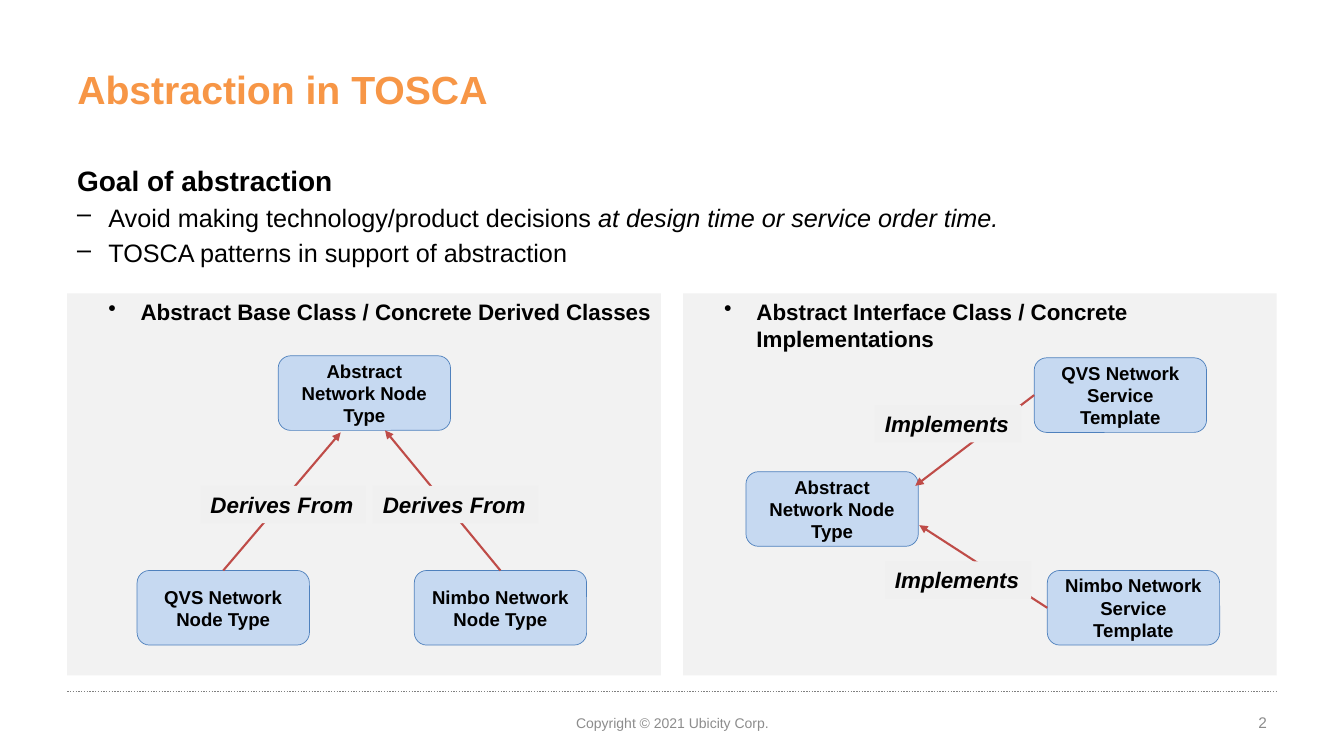
from dataclasses import dataclass

from lxml import etree
from pptx import Presentation
from pptx import util as u
from pptx.dml.color import RGBColor
from pptx.enum import dml, shapes, text
from pptx.oxml.ns import qn


@dataclass(frozen=True)
class Theme:
    font: str = "Arial"
    ink: str = "000000"
    accent: str = "F79646"
    muted: str = "8C8C8C"
    rule: str = "808080"
    panel: str = "F2F2F2"
    label: str = "F0F0F0"
    node: str = "C6D9F1"
    node_edge: str = "4F81BD"
    arrow: str = "BF4C48"
    title_size: float = 28
    heading_size: float = 20
    bullet_size: float = 18
    panel_size: float = 16
    node_size: float = 13.3
    number_size: float = 11
    footer_size: float = 10


class Sheet:
    """One slide laid out on a grid of 40 columns and 30 rows."""
    COLUMNS, ROWS = 40, 30
    NODE = (5.13, 2.96)

    def __init__(self, deck, theme):
        self.theme = theme
        self.column = deck.slide_width / self.COLUMNS
        self.row = deck.slide_height / self.ROWS
        self.page = deck.slides.add_slide(deck.slide_layouts[5])

    def place(self, *lengths):
        units = (self.column, self.row) * 2
        return [u.Emu(round(n * unit)) for n, unit in zip(lengths, units)]

    def style(self, para, size, color=None, bold=False, italic=False,
              align=text.PP_ALIGN.LEFT):
        para.alignment = align
        font = para.font
        font.name, font.size = self.theme.font, u.Pt(size)
        font.bold, font.italic = bold, italic
        font.color.rgb = RGBColor.from_string(color or self.theme.ink)

    def bullet(self, para, mark, margin, hang):
        props = para._p.get_or_add_pPr()
        props.set("marL", str(u.Inches(margin)))
        props.set("indent", str(-u.Inches(hang)))
        etree.SubElement(props, qn("a:buChar")).set("char", mark)

    def title(self, words, *area):
        box = self.page.shapes.title
        box.left, box.top, box.width, box.height = self.place(*area)
        frame = box.text_frame
        frame.text = words
        frame.auto_size = text.MSO_AUTO_SIZE.NONE
        frame.vertical_anchor = text.MSO_ANCHOR.MIDDLE
        self.style(frame.paragraphs[0], self.theme.title_size,
                   self.theme.accent, bold=True)

    def text_box(self, *area, anchor=text.MSO_ANCHOR.TOP):
        frame = self.page.shapes.add_textbox(*self.place(*area)).text_frame
        frame.word_wrap = True
        frame.vertical_anchor = anchor
        return frame

    def goals(self, heading, items, *area):
        frame = self.text_box(*area)
        frame.text = heading
        self.style(frame.paragraphs[0], self.theme.heading_size, bold=True)
        for plain, stressed in items:
            para = frame.add_paragraph()
            para.add_run().text = plain
            if stressed:
                span = para.add_run()
                span.text = stressed
                span.font.italic = True
            para.space_before = u.Pt(0.2 * self.theme.bullet_size)
            self.bullet(para, "–", 0.31, 0.31)
            self.style(para, self.theme.bullet_size)

    def small_print(self, words, size, align, *area):
        frame = self.text_box(*area, anchor=text.MSO_ANCHOR.MIDDLE)
        frame.text = words
        self.style(frame.paragraphs[0], size, self.theme.muted, align=align)

    def block(self, kind, fill, words, *area):
        box = self.page.shapes.add_shape(kind, *self.place(*area))
        box.shadow.inherit = False
        box.fill.solid()
        box.fill.fore_color.rgb = RGBColor.from_string(fill)
        box.line.fill.background()
        box.text_frame.text = words
        box.text_frame.vertical_anchor = text.MSO_ANCHOR.TOP
        return box, box.text_frame.paragraphs[0]

    def panel(self, heading, *area):
        box, para = self.block(shapes.MSO_SHAPE.RECTANGLE, self.theme.panel,
                               heading, *area)
        box.text_frame.word_wrap = True
        box.text_frame.margin_right = u.Inches(0.08)
        self.bullet(para, "•", 0.63, 0.32)
        self.style(para, self.theme.panel_size, bold=True)

    def node(self, words, left, top):
        box, para = self.block(shapes.MSO_SHAPE.ROUNDED_RECTANGLE,
                               self.theme.node, words, left, top, *self.NODE)
        box.line.color.rgb = RGBColor.from_string(self.theme.node_edge)
        box.line.width = u.Pt(0.5)
        frame = box.text_frame
        frame.word_wrap = True
        frame.margin_top = frame.margin_bottom = 0
        frame.vertical_anchor = text.MSO_ANCHOR.MIDDLE
        self.style(para, self.theme.node_size, bold=True,
                   align=text.PP_ALIGN.CENTER)
        return box

    def label(self, words, left, top, width):
        box, para = self.block(shapes.MSO_SHAPE.RECTANGLE, self.theme.label,
                               words, left, top, width, 1.48)
        box.text_frame.word_wrap = False
        box.text_frame.auto_size = text.MSO_AUTO_SIZE.SHAPE_TO_FIT_TEXT
        self.style(para, self.theme.panel_size, bold=True, italic=True)

    def line(self, color, width, *ends):
        link = self.page.shapes.add_connector(
            shapes.MSO_CONNECTOR.STRAIGHT, *self.place(*ends))
        link.line.color.rgb = RGBColor.from_string(color)
        link.line.width = u.Pt(width)
        etree.SubElement(link._element.spPr, qn("a:effectLst"))
        return link

    def arrow(self, source, side, column, row):
        link = self.line(self.theme.arrow, 1.5, column, row, column, row)
        link.begin_connect(source, side)
        head = etree.SubElement(link.line._get_or_add_ln(), qn("a:tailEnd"))
        head.set("type", "triangle")

    def dotted_rule(self, *ends):
        rule = self.line(self.theme.rule, 1, *ends)
        rule.line.dash_style = dml.MSO_LINE.ROUND_DOT


def main():
    deck = Presentation()
    deck.slide_width, deck.slide_height = u.Inches(13.333), u.Inches(7.5)
    theme = Theme()
    sheet = Sheet(deck, theme)

    # Title and goals
    sheet.title("Abstraction in TOSCA", 2, 1.8, 36, 3.48)
    sheet.goals("Goal of abstraction", [
        ("Avoid making technology/product decisions ",
         "at design time or service order time."),
        ("TOSCA patterns in support of abstraction", ""),
    ], 2, 6.28, 36, 5)

    # Footer
    sheet.dotted_rule(2, 27.44, 38, 27.44)
    sheet.small_print("Copyright © 2021 Ubicity Corp.", theme.footer_size,
                      text.PP_ALIGN.CENTER, 13.68, 27.96, 12.66, 1.44)
    sheet.small_print("2", theme.number_size, text.PP_ALIGN.RIGHT,
                      28.68, 27.96, 9.32, 1.44)

    # Each pattern: heading, abstract node, then per concrete node
    # its name, place, arrow tip and label place
    top, side = 0, 1
    patterns = [
        ("Abstract Base Class / Concrete Derived Classes", (8.28, 14.12),
         "Derives From", 4.92, top, [
             ("QVS Network Node Type", (4.08, 22.64), (10.14, 17.16), (5.97, 19.28)),
             ("Nimbo Network Node Type", (12.33, 22.64), (11.46, 17.08), (11.1, 19.28))]),
        ("Abstract Interface Class / Concrete Implementations", (22.2, 18.72),
         "Implements", 4.35, side, [
             ("QVS Network Service Template", (30.78, 14.2), (27.24, 19.28), (26.04, 16.08)),
             ("Nimbo Network Service Template", (31.17, 22.64), (27.36, 20.84), (26.34, 22.28))]),
    ]
    for index, (heading, base, relation, width, site, concretes) in enumerate(patterns):
        sheet.panel(heading, 2 + index * 18.33, 11.64, 17.67, 15.16)
        sheet.node("Abstract Network Node Type", *base)
        for name, spot, tip, label_spot in concretes:
            sheet.arrow(sheet.node(name, *spot), site, *tip)
            sheet.label(relation, *label_spot, width)

    deck.save("out.pptx")


if __name__ == "__main__":
    main()
